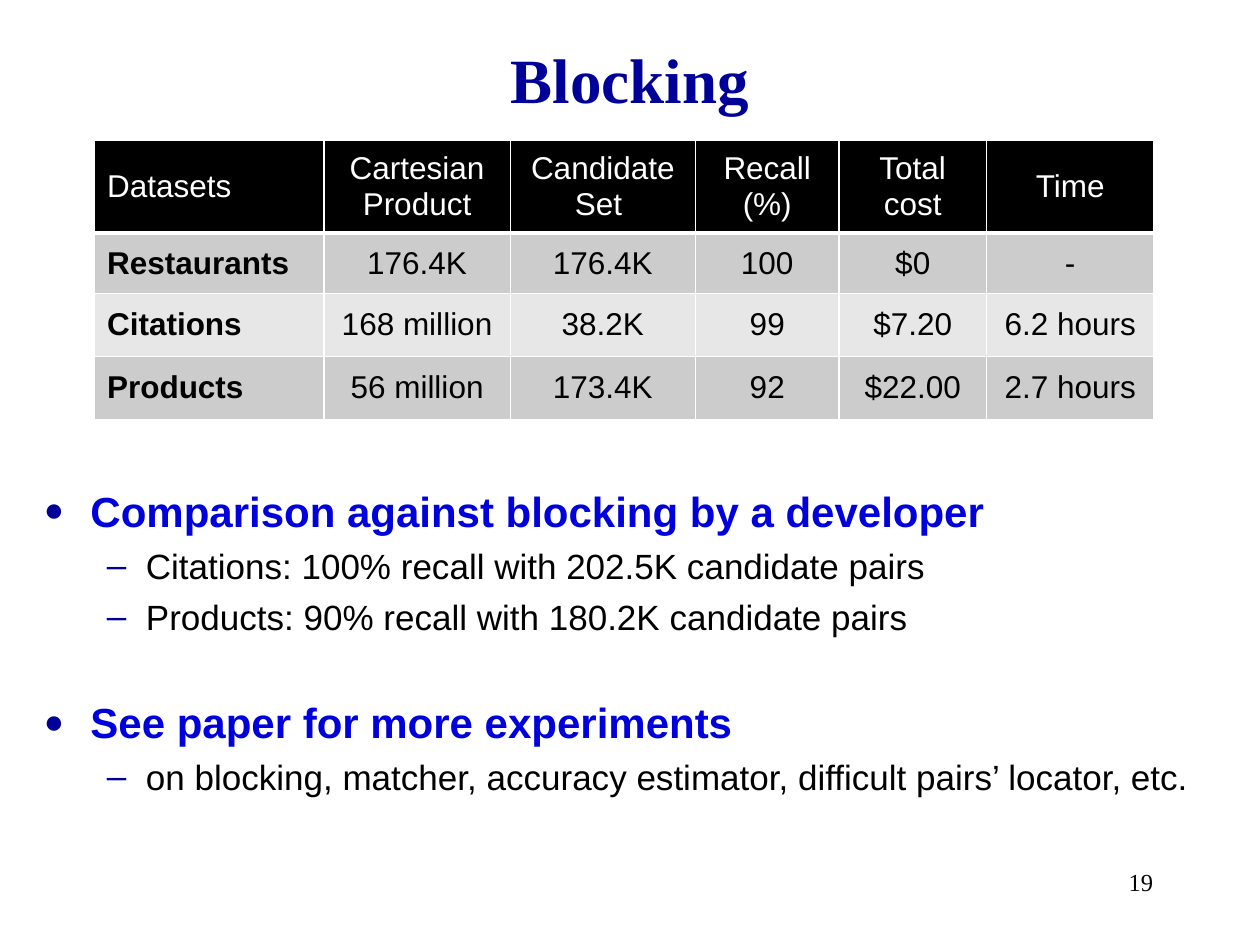
import pptx
import pptx.dml.color
import pptx.enum.text
import pptx.oxml
import pptx.oxml.ns
import pptx.util
from dataclasses import dataclass

Inches, Pt = pptx.util.Inches, pptx.util.Pt
Align, Anchor = pptx.enum.text.PP_ALIGN, pptx.enum.text.MSO_ANCHOR

TITLE = "Blocking"
PAGE_NUMBER = "19"
RESULTS = [
    ["Datasets", "Cartesian Product", "Candidate Set ", "Recall (%)", "Total cost", "Time"],
    ["Restaurants", "176.4K", "176.4K", "100", "$0", "-"],
    ["Citations", "168 million", "38.2K", "99", "$7.20", "6.2 hours"],
    ["Products", "56 million", "173.4K", "92", "$22.00", "2.7 hours"],
]
COLUMN_WIDTHS = [1.82, 1.48, 1.47, 1.14, 1.17, 1.33]
ROW_HEIGHTS = [0.74, 0.48, 0.5, 0.5]
POINTS = [
    ("Comparison against blocking by a developer", [
        "Citations: 100% recall with 202.5K candidate pairs",
        "Products: 90% recall with 180.2K candidate pairs",
    ]),
    ("See paper for more experiments", [
        "on blocking, matcher, accuracy estimator, difficult pairs’ locator, etc.",
    ]),
]


@dataclass(frozen=True)
class Theme:
    serif: str = "Times New Roman"
    sans: str = "Arial"
    navy: str = "000099"
    blue: str = "0000DC"
    black: str = "000000"
    white: str = "FFFFFF"
    bands: tuple = ("CCCCCC", "E7E7E7")
    title_size: int = 36
    point_size: int = 24
    detail_size: int = 20
    table_size: int = 18
    number_size: int = 14
    section_gap: int = 34
    detail_gap: int = 5


THEME = Theme()


def rgb(color):
    return pptx.dml.color.RGBColor.from_string(color)


def add_run(paragraph, text, font, size, color, bold=False):
    run = paragraph.add_run()
    run.text = text
    run.font.name = font
    run.font.size = Pt(size)
    run.font.bold = bold
    run.font.color.rgb = rgb(color)


def set_bullet(paragraph, character, left, hanging, percent):
    """Give the paragraph a navy bullet hanging left of its text."""
    properties = paragraph._p.get_or_add_pPr()
    properties.set("marL", str(Inches(left)))
    properties.set("indent", str(-Inches(hanging)))
    namespace = pptx.oxml.ns.nsdecls("a")
    for xml in (
        f'<a:buClr {namespace}><a:srgbClr val="{THEME.navy}"/></a:buClr>',
        f'<a:buSzPct {namespace} val="{percent * 1000}"/>',
        f'<a:buFont {namespace} typeface="{THEME.sans}"/>',
        f'<a:buChar {namespace} char="{character}"/>',
    ):
        properties.append(pptx.oxml.parse_xml(xml))


def set_borders(cell, bottom):
    """Draw white cell borders, one point wide except at the bottom."""
    properties = cell._tc.get_or_add_tcPr()
    namespace = pptx.oxml.ns.nsdecls("a")
    widths = {"lnL": 1, "lnR": 1, "lnT": 1, "lnB": bottom}
    for index, (side, width) in enumerate(widths.items()):
        properties.insert(index, pptx.oxml.parse_xml(
            f'<a:{side} {namespace} w="{Pt(width)}"><a:solidFill>'
            f'<a:srgbClr val="{THEME.white}"/></a:solidFill></a:{side}>'))


def add_title(slide):
    title = slide.shapes.title
    title.left, title.top = Inches(0.75), Inches(0.25)
    title.width, title.height = Inches(8.5), Inches(0.75)
    title.text_frame.vertical_anchor = Anchor.MIDDLE
    paragraph = title.text_frame.paragraphs[0]
    paragraph.alignment = Align.CENTER
    add_run(paragraph, TITLE, THEME.serif, THEME.title_size, THEME.navy, True)


def add_results(slide):
    table = slide.shapes.add_table(
        len(RESULTS), len(COLUMN_WIDTHS), Inches(0.75), Inches(1.11),
        Inches(sum(COLUMN_WIDTHS)), Inches(sum(ROW_HEIGHTS))).table
    table.horz_banding = False
    for column, width in zip(table.columns, COLUMN_WIDTHS):
        column.width = Inches(width)
    for row, height in zip(table.rows, ROW_HEIGHTS):
        row.height = Inches(height)
    for i, values in enumerate(RESULTS):
        header = i == 0
        for j, value in enumerate(values):
            cell = table.cell(i, j)
            cell.vertical_anchor = Anchor.MIDDLE
            cell.fill.solid()
            cell.fill.fore_color.rgb = rgb(THEME.black if header else THEME.bands[(i - 1) % 2])
            set_borders(cell, bottom=3 if header else 1)
            paragraph = cell.text_frame.paragraphs[0]
            paragraph.alignment = Align.CENTER if j else Align.LEFT
            add_run(paragraph, value, THEME.sans, THEME.table_size,
                    THEME.white if header else THEME.black, bold=not header and j == 0)


def add_points(slide):
    frame = slide.shapes.add_textbox(
        Inches(0.25), Inches(3.75), Inches(9.5), Inches(2.92)).text_frame
    frame.word_wrap = True
    frame.margin_top = frame.margin_bottom = Inches(0.1)
    for index, (point, details) in enumerate(POINTS):
        paragraph = frame.add_paragraph() if index else frame.paragraphs[0]
        paragraph.space_before = Pt(THEME.section_gap if index else 0)
        set_bullet(paragraph, "●", 0.37, 0.37, 80)
        add_run(paragraph, point, THEME.sans, THEME.point_size, THEME.blue, True)
        for detail in details:
            paragraph = frame.add_paragraph()
            paragraph.level = 1
            paragraph.space_before = Pt(THEME.detail_gap)
            set_bullet(paragraph, "–", 0.81, 0.31, 100)
            add_run(paragraph, detail, THEME.sans, THEME.detail_size, THEME.black)


def add_page_number(slide):
    frame = slide.shapes.add_textbox(
        Inches(7.17), Inches(6.83), Inches(2.08), Inches(0.5)).text_frame
    frame.word_wrap = True
    paragraph = frame.paragraphs[0]
    paragraph.alignment = Align.RIGHT
    add_run(paragraph, PAGE_NUMBER, THEME.serif, THEME.number_size, THEME.black)


def main():
    presentation = pptx.Presentation()
    presentation.slide_width, presentation.slide_height = Inches(10), Inches(7.5)
    slide = presentation.slides.add_slide(presentation.slide_layouts.get_by_name("Title Only"))
    add_title(slide)
    add_results(slide)
    add_points(slide)
    add_page_number(slide)
    presentation.save("out.pptx")


if __name__ == "__main__":
    main()
